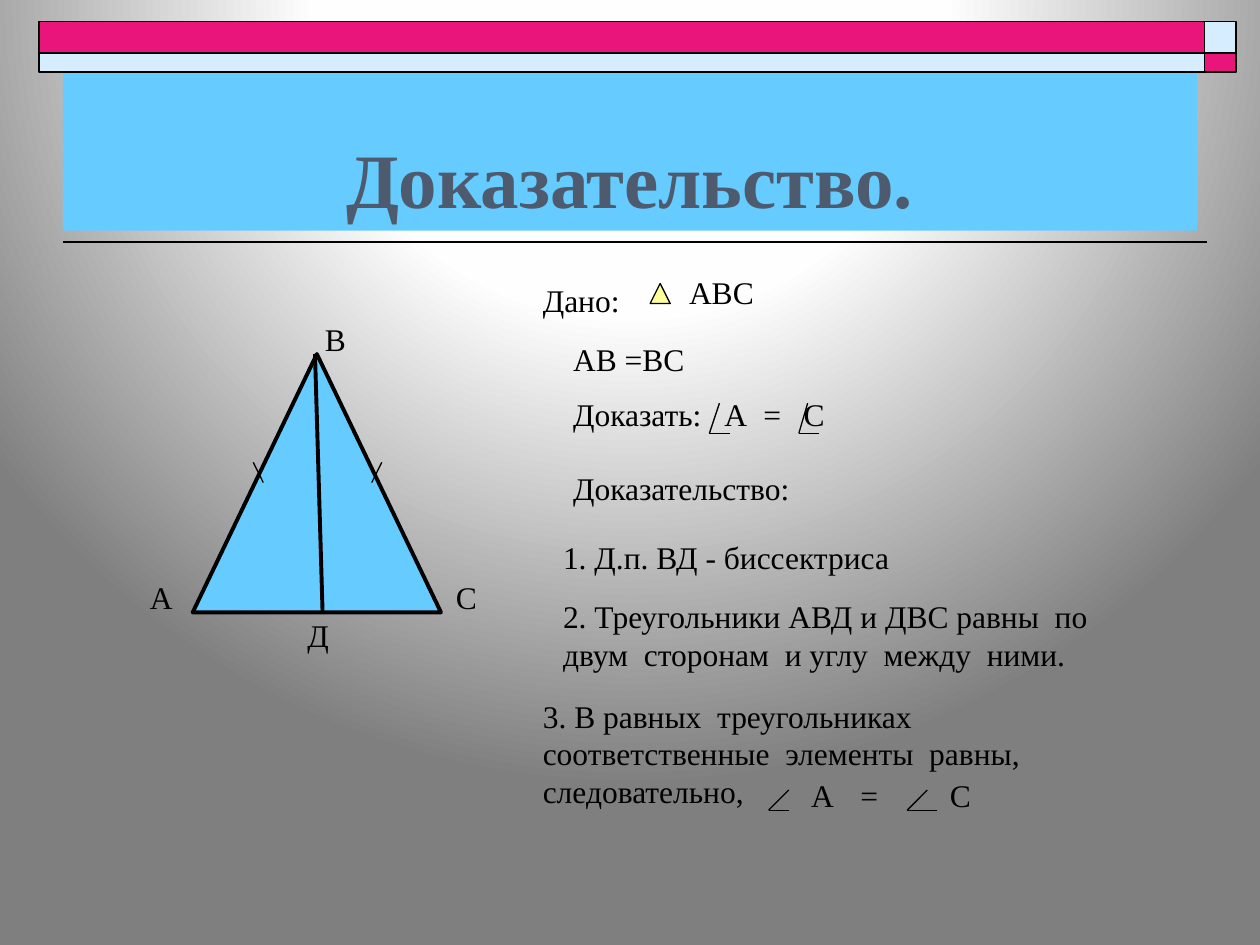
from lxml import etree
from pptx import Presentation
from pptx import util as u
from pptx.dml.color import RGBColor
from pptx.enum import shapes, text
from pptx.oxml import parse_xml
from pptx.oxml.ns import nsdecls, qn

FONT = "Times New Roman"
BLACK, PINK, PALE, SKY = "000000", "EA157A", "D6ECFF", "66CCFF"
RECT = shapes.MSO_SHAPE.RECTANGLE
TRI = shapes.MSO_SHAPE.ISOSCELES_TRIANGLE

# Content
TITLE = "Доказательство."
GLOW = [(0, "FFFFFF"), (40, "FEFEFE"), (100, "7F7F7F")]
BAND_X, BAND_W = (0.31, 9.56), (9.25, 0.25)
BAND_Y, BAND_H = (0.17, 0.42), (0.25, 0.15)
BAND_FILL = [(PINK, PALE), (PALE, PINK)]

# Left, top, width, paragraphs, height
LABELS = [
    (1.09, 4.54, 0.39, ["А"], 0.4),
    (2.48, 2.49, 0.63, ["В"], 0.4),
    (3.52, 4.54, 0.54, ["С"], 0.4),
    (2.34, 4.84, 0.69, ["Д"], 0.4),
]
PROOF = [
    (4.21, 2.18, 4.33, ["Дано:"], 0.4),
    (5.37, 2.12, 0.72, ["АВС"], 0.4),
    (4.45, 2.65, 2.6, ["АВ =ВС", "Доказать:\tА\t=\tС"], 0.85),
    (4.45, 3.67, 4.33, ["Доказательство:"], 0.4),
    (4.37, 4.22, 4.65, ["1. Д.п. ВД - биссектриса"], 0.4),
    (4.37, 4.69, 4.49, ["2. Треугольники АВД и ДВС равны  по двум  "
                        "сторонам  и углу  между  ними."], 0.7),
    (4.21, 5.48, 4.57, ["3. В равных  треугольниках  соответственные  "
                        "элементы  равны, следовательно,"], 1),
    (6.34, 6.11, 0.63, ["А"], 0.4),
    (6.73, 6.11, 1.42, ["="], 0.4),
    (7.44, 6.11, 0.63, ["С"], 0.4),
]
TABS = (1.2, 1.51, 1.83)

# Corner, width of base, rise and run of the slanted side
ANGLES = [
    (5.63, 3.44, 0.16, 0.24, 0.08),
    (6.34, 3.44, 0.16, 0.24, 0.07),
    (6.1, 6.43, 0.16, 0.16, 0.16),
    (7.2, 6.43, 0.24, 0.16, 0.16),
]
TICKS = [(2.95, 3.83, 3.03, 3.67), (2.01, 3.67, 2.09, 3.83)]

deck = Presentation()
deck.slide_width, deck.slide_height = u.Inches(10), u.Inches(7.5)
slide = deck.slides.add_slide(deck.slide_layouts[6])


def color(code):
    return RGBColor.from_string(code)


def shape(kind, x, y, w, h, fill, width=None):
    item = slide.shapes.add_shape(kind, *map(u.Inches, (x, y, w, h)))
    item.shadow.inherit = False
    item.fill.solid()
    item.fill.fore_color.rgb = color(fill)
    if width:
        item.line.color.rgb = color(BLACK)
        item.line.width = u.Pt(width)
    else:
        item.line.fill.background()
    return item


def line(x1, y1, x2, y2, width=0.75):
    item = slide.shapes.add_connector(
        shapes.MSO_CONNECTOR.STRAIGHT, *map(u.Inches, (x1, y1, x2, y2)))
    item.line.color.rgb = color(BLACK)
    item.line.width = u.Pt(width)
    etree.SubElement(item._element.spPr, qn("a:effectLst"))


def style(para, size, code):
    para.font.name, para.font.size = FONT, u.Pt(size)
    para.font.color.rgb = color(code)


def label(x, y, w, paras, h):
    box = slide.shapes.add_textbox(*map(u.Inches, (x, y, w, h)))
    frame = box.text_frame
    frame.word_wrap = True
    frame.text = "\n".join(paras)
    for i, para in enumerate(frame.paragraphs):
        style(para, 18, BLACK)
        if i:
            para.space_before = u.Pt(9.5)
        if "\t" in para.text:
            stops = "".join(f'<a:tab pos="{u.Inches(t)}" algn="l"/>' for t in TABS)
            tabs = parse_xml(f'<a:tabLst {nsdecls("a")}>{stops}</a:tabLst>')
            para._p.get_or_add_pPr().append(tabs)


# Background glow from above the top edge
fill = slide.background.fill
fill.gradient()
grad = slide._element.cSld.bg.bgPr.find(qn("a:gradFill"))
stops = "".join(f'<a:gs pos="{p * 1000}"><a:srgbClr val="{c}"/></a:gs>'
                for p, c in GLOW)
grad.getparent().replace(grad, parse_xml(
    f'<a:gradFill {nsdecls("a")} rotWithShape="1"><a:gsLst>{stops}</a:gsLst>'
    '<a:path path="circle"><a:fillToRect l="50000" t="-80000" r="50000" '
    'b="180000"/></a:path></a:gradFill>'))

# Top band and rule
line(0.5, 1.92, 9.58, 1.92, 1)
for y, h, fills in zip(BAND_Y, BAND_H, BAND_FILL):
    for x, w, code in zip(BAND_X, BAND_W, fills):
        shape(RECT, x, y, w, h, code, 1)

# Title
head = shape(RECT, 0.5, 0.58, 9, 1.25, SKY).text_frame
head.text = TITLE
head.vertical_anchor = text.MSO_ANCHOR.BOTTOM
para = head.paragraphs[0]
para.alignment = text.PP_ALIGN.CENTER
para.font.bold = True
style(para, 44, "4E5B6F")

# Triangle with bisector and equal-side ticks
shape(TRI, 1.53, 2.81, 1.97, 2.05, SKY, 2.25)
line(2.5, 2.81, 2.56, 4.85, 2.25)
for tick in TICKS:
    line(*tick)
shape(TRI, 5.16, 2.25, 0.16, 0.16, "FFFF99", 0.75)

# Texts and angle signs
for item in LABELS + PROOF:
    label(*item)
for x, y, base, rise, run in ANGLES:
    line(x, y, x + run, y - rise)
    line(x, y, x + base, y)

deck.save("out.pptx")
